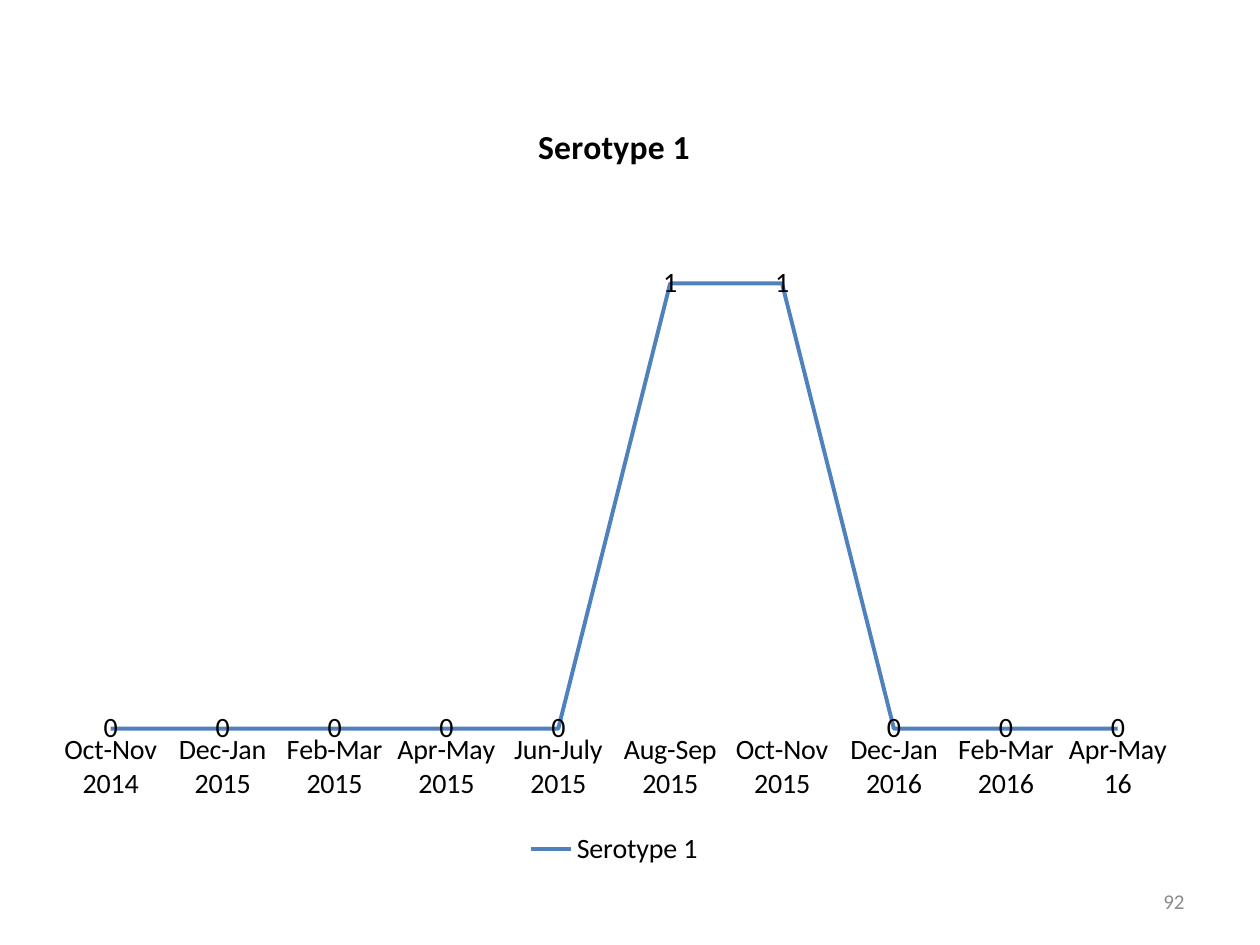
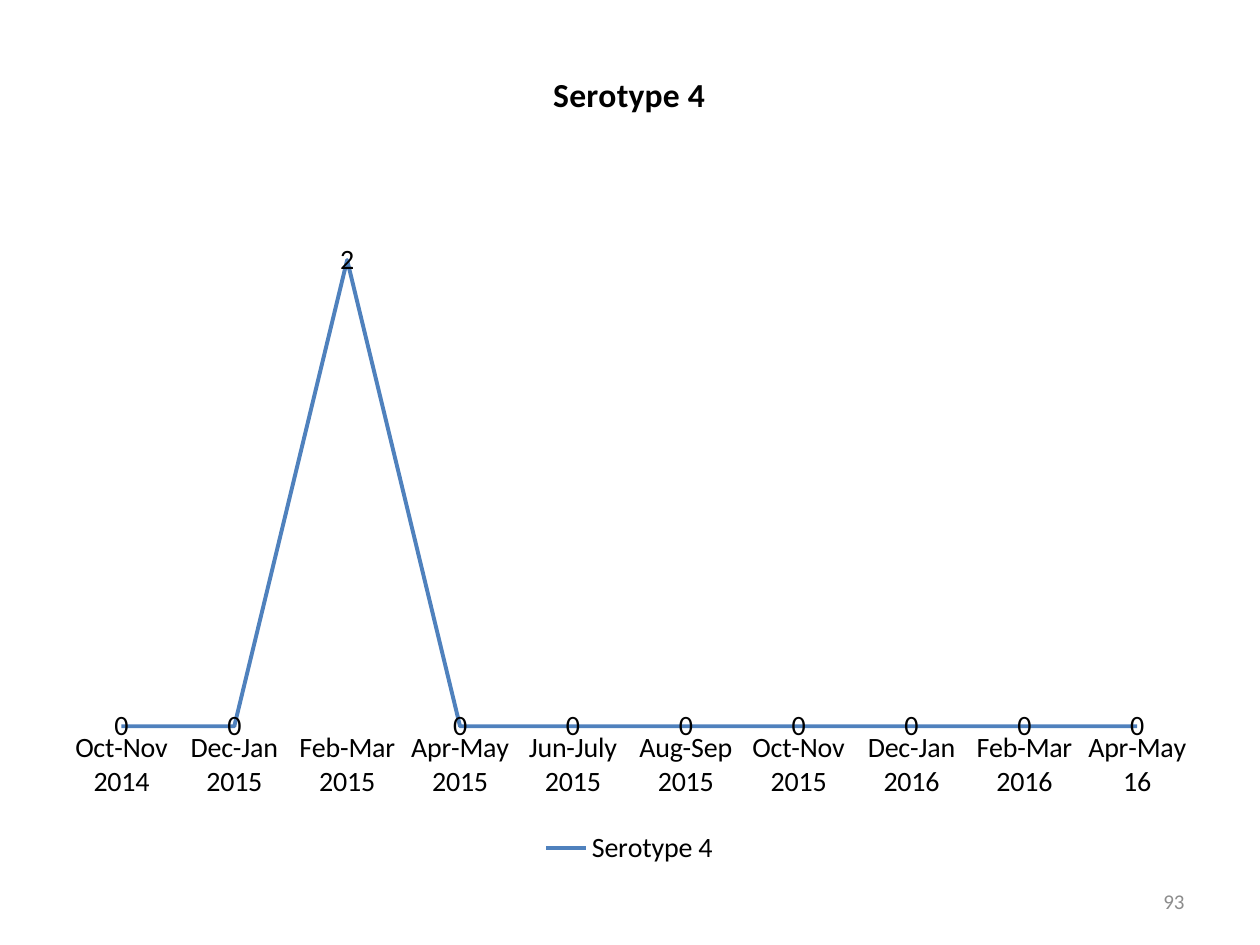
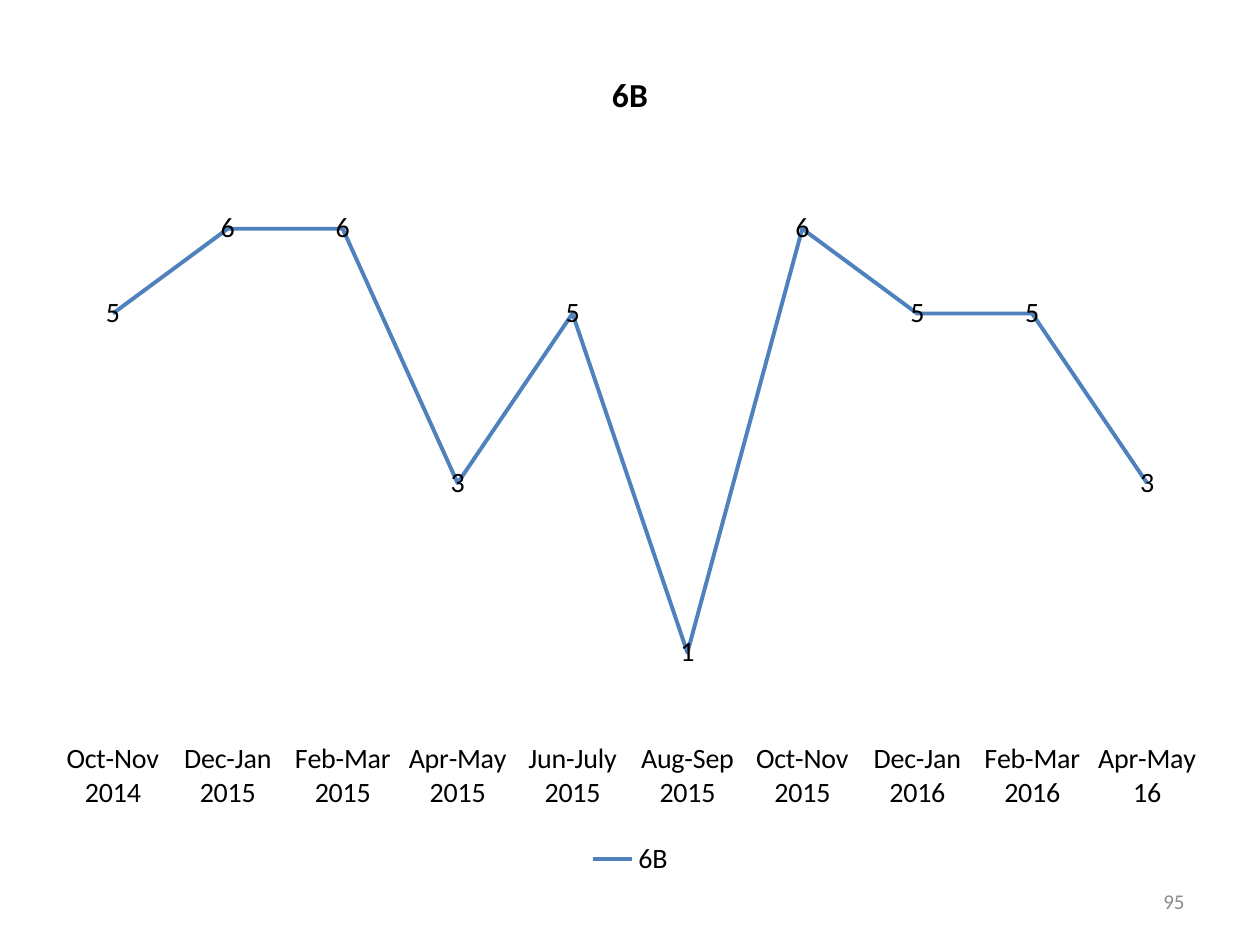
from pptx import Presentation
from pptx.chart.data import CategoryChartData
from pptx.dml.color import RGBColor
from pptx.enum.chart import XL_CHART_TYPE, XL_LABEL_POSITION, XL_LEGEND_POSITION, XL_TICK_MARK
from pptx.enum.text import MSO_ANCHOR, PP_ALIGN
from pptx.util import Inches, Pt

LINE_CHART = XL_CHART_TYPE.LINE
LABEL_CENTER = XL_LABEL_POSITION.CENTER
LEGEND_BOTTOM = XL_LEGEND_POSITION.BOTTOM
NO_TICK = XL_TICK_MARK.NONE
MIDDLE = MSO_ANCHOR.MIDDLE
RIGHT = PP_ALIGN.RIGHT

# Content
PERIODS = [
    "Oct-Nov 2014", "Dec-Jan 2015", "Feb-Mar 2015", "Apr-May 2015", "Jun-July 2015",
    "Aug-Sep 2015", "Oct-Nov 2015", "Dec-Jan 2016", "Feb-Mar 2016", "Apr-May 16",
]
SEROTYPES = [
    {"name": "Serotype 1", "page": 92, "counts": [0, 0, 0, 0, 0, 1, 1, 0, 0, 0],
     "axis_max": 1.2, "place": (0.25, 0.75, 9.25, 6.17)},
    {"name": "Serotype 4", "page": 93, "counts": [0, 0, 2, 0, 0, 0, 0, 0, 0, 0],
     "axis_max": 2.5, "place": (0.33, 0.33, 9.33, 6.58)},
    {"name": "6B", "page": 95, "counts": [5, 6, 6, 3, 5, 1, 6, 5, 5, 3],
     "axis_max": 7, "place": (0.25, 0.33, 9.5, 6.67)},
]

# Shared style
COLORS = {"text": "000000", "trend": "4F81BD", "page": "8C8C8C"}
FONT = "Calibri"
PAGE_PLACE = (7.17, 6.95, 2.33, 0.4)


def style_font(font, size, color, bold=False):
    font.name = FONT
    font.size = Pt(size)
    font.bold = bold
    font.color.rgb = RGBColor.from_string(COLORS[color])


def add_page_number(slide, page):
    frame = slide.shapes.add_textbox(*map(Inches, PAGE_PLACE)).text_frame
    frame.word_wrap = True
    frame.vertical_anchor = MIDDLE
    number = frame.paragraphs[0]
    number.text = str(page)
    number.alignment = RIGHT
    style_font(number.font, 12, "page")


def add_trend_chart(slide, serotype):
    data = CategoryChartData()
    data.categories = PERIODS
    data.add_series(serotype["name"], serotype["counts"])
    chart = slide.shapes.add_chart(LINE_CHART, *map(Inches, serotype["place"]), data).chart
    style_font(chart.font, 16, "text")

    # Title and legend
    chart.has_title = True
    title = chart.chart_title.text_frame.paragraphs[0]
    title.text = serotype["name"]
    style_font(title.font, 19.2, "text", bold=True)
    chart.chart_title.include_in_layout = False
    chart.has_legend = True
    chart.legend.position = LEGEND_BOTTOM
    chart.legend.include_in_layout = False

    # Axes
    periods = chart.category_axis
    periods.major_tick_mark = periods.minor_tick_mark = NO_TICK
    periods.format.line.fill.background()
    counts = chart.value_axis
    counts.minimum_scale = 0
    counts.maximum_scale = serotype["axis_max"]
    counts.has_major_gridlines = False
    counts.visible = False

    # Trend line and its value labels
    plot = chart.plots[0]
    plot.vary_by_categories = False
    trend = plot.series[0]
    trend.smooth = False
    trend.format.line.width = Pt(2.25)
    trend.format.line.color.rgb = RGBColor.from_string(COLORS["trend"])
    labels = trend.data_labels
    labels.show_value = True
    labels.position = LABEL_CENTER
    style_font(labels.font, 16, "text")


def main():
    deck = Presentation()
    deck.slide_width, deck.slide_height = Inches(10), Inches(7.5)
    blank = deck.slide_layouts[6]
    for serotype in SEROTYPES:
        slide = deck.slides.add_slide(blank)
        add_page_number(slide, serotype["page"])
        add_trend_chart(slide, serotype)
    deck.save("out.pptx")


if __name__ == "__main__":
    main()
